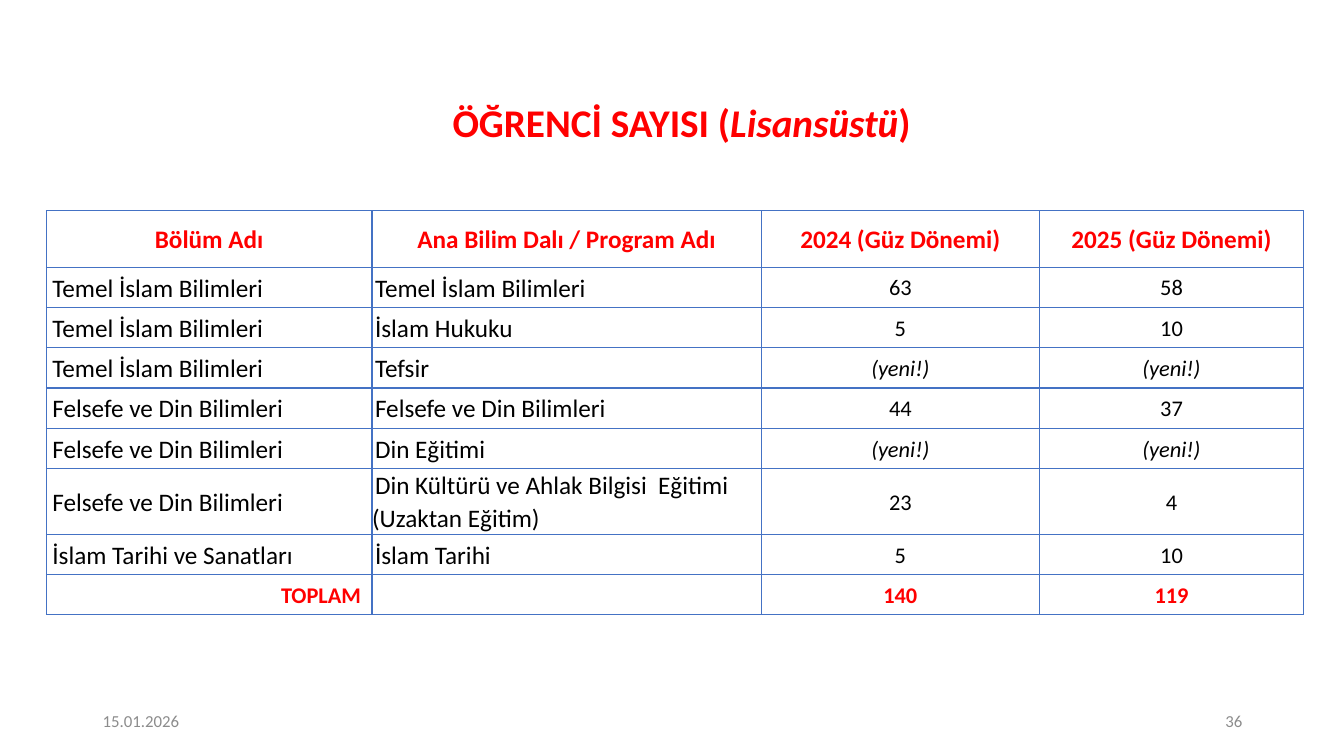
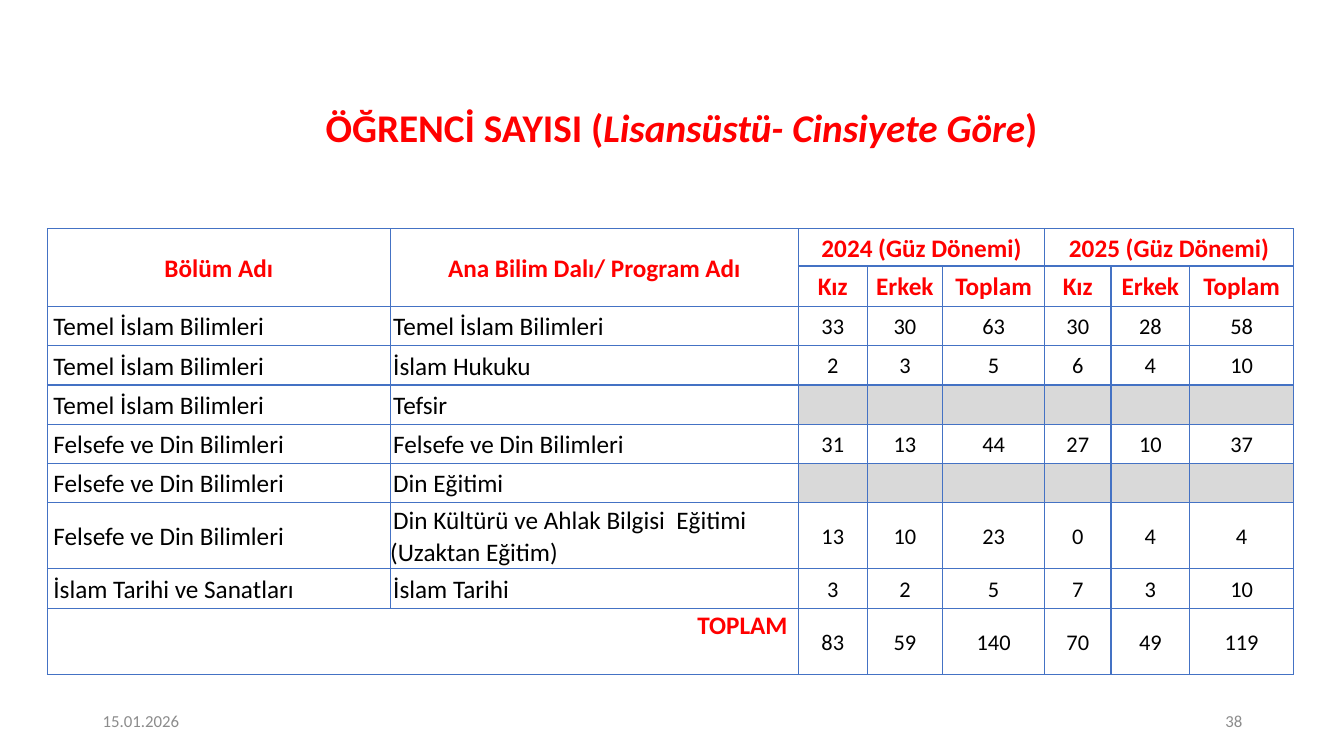
from dataclasses import dataclass, replace
from typing import Optional

from lxml.etree import SubElement
from pptx import Presentation
from pptx.dml.color import RGBColor
from pptx.enum.text import MSO_ANCHOR as Anchor, PP_ALIGN as Align
from pptx.oxml.ns import qn
from pptx.util import Inches, Pt

RED = RGBColor(0xFF, 0x00, 0x00)
BLACK = RGBColor(0x00, 0x00, 0x00)
FOOTER_GREY = RGBColor(0x8C, 0x8C, 0x8C)
EMPTY_GREY = RGBColor(0xD9, 0xD9, 0xD9)
BORDER_BLUE = RGBColor(0x44, 0x72, 0xC4)
FONT = "Calibri"
DATE = "15.01.2026"
NEW = "(yeni!)"


@dataclass(frozen=True)
class Style:
    size: int
    color: RGBColor = BLACK
    bold: bool = False
    italic: bool = False
    align: Align = Align.CENTER
    anchor: Anchor = Anchor.MIDDLE
    spacing: float = 1.07
    indent: float = 0
    right_margin: float = 0


@dataclass(frozen=True)
class Cell:
    text: str
    style: Style
    fill: Optional[RGBColor] = None


@dataclass(frozen=True)
class Program:
    department: str
    name: str
    # (girls, boys) per autumn term; None for a new program
    y2024: Optional[tuple[int, int]] = None
    y2025: Optional[tuple[int, int]] = None


@dataclass(frozen=True)
class TableLayout:
    left: float
    top: float
    columns: list[float]
    rows: list[float]
    merges: list[tuple[int, int, int, int]]


TITLE = Style(28, RED, bold=True, spacing=0.9)
FOOTER = Style(12, FOOTER_GREY, align=Align.LEFT, spacing=1)
HEADER = Style(18, RED, bold=True)
DEPARTMENT = Style(18, align=Align.LEFT, indent=0.06)
PROGRAM = replace(DEPARTMENT, indent=0.03)
VALUE = Style(16)
NEW_VALUE = replace(VALUE, italic=True)
TOTAL = Style(16, RED, bold=True)
TOTAL_LABEL = replace(TOTAL, align=Align.RIGHT, right_margin=0.11)

BASIC = "Temel İslam Bilimleri"
PHILOSOPHY = "Felsefe ve Din Bilimleri"
PROGRAMS = [
    Program(BASIC, BASIC, (33, 30), (30, 28)),
    Program(BASIC, "İslam Hukuku", (2, 3), (6, 4)),
    Program(BASIC, "Tefsir"),
    Program(PHILOSOPHY, PHILOSOPHY, (31, 13), (27, 10)),
    Program(PHILOSOPHY, "Din Eğitimi"),
    Program(PHILOSOPHY, "Din Kültürü ve Ahlak Bilgisi  Eğitimi (Uzaktan Eğitim)",
            (13, 10), (0, 4)),
    Program("İslam Tarihi ve Sanatları", "İslam Tarihi", (3, 2), (7, 3)),
]
TERMS = ["2024 (Güz Dönemi)", "2025 (Güz Dönemi)"]
TOTALS = [(83, 59, 140), (70, 49, 119)]


# Text
def format_paragraph(paragraph, style: Style) -> None:
    if style.indent:
        properties = paragraph._p.get_or_add_pPr()
        properties.set("marL", "0")
        properties.set("indent", str(Inches(style.indent)))
    paragraph.alignment = style.align
    paragraph.line_spacing = style.spacing
    for font in [paragraph.font, *(run.font for run in paragraph.runs)]:
        font.name, font.size = FONT, Pt(style.size)
        font.bold, font.italic = style.bold, style.italic
        font.color.rgb = style.color


def add_text(slide, text: str, style: Style, left: float, top: float,
             width: float, height: float):
    shape = slide.shapes.add_textbox(Inches(left), Inches(top),
                                     Inches(width), Inches(height))
    frame = shape.text_frame
    frame.word_wrap = True
    frame.vertical_anchor = style.anchor
    frame.text = text
    format_paragraph(frame.paragraphs[0], style)
    return frame.paragraphs[0]


def add_frame(slide, topic: str, title_height: float, number: int) -> None:
    """Title with an italic topic, date and slide number."""
    title = add_text(slide, "ÖĞRENCİ SAYISI (", TITLE, 0.73, 0.96, 12.06, title_height)
    for part in (topic, ")"):
        title.add_run().text = part
    format_paragraph(title, TITLE)
    title.runs[1].font.italic = True
    add_text(slide, DATE, FOOTER, 0.92, 6.95, 3, 0.4)
    add_text(slide, str(number), replace(FOOTER, align=Align.RIGHT), 9.42, 6.95, 3, 0.4)


# Table
def add_borders(cell) -> None:
    properties = cell._tc.get_or_add_tcPr()
    for side in ("a:lnL", "a:lnR", "a:lnT", "a:lnB"):
        line = SubElement(properties, qn(side), w=str(Pt(1)))
        fill = SubElement(line, qn("a:solidFill"))
        SubElement(fill, qn("a:srgbClr"), val=str(BORDER_BLUE))


def fill_cell(cell, content: Cell) -> None:
    style = content.style
    cell.margin_left = cell.margin_top = cell.margin_bottom = 0
    cell.margin_right = Inches(style.right_margin)
    cell.vertical_anchor = style.anchor
    add_borders(cell)
    if content.fill is None:
        cell.fill.background()
    else:
        cell.fill.solid()
        cell.fill.fore_color.rgb = content.fill
    cell.text_frame.text = content.text
    format_paragraph(cell.text_frame.paragraphs[0], style)


def add_student_table(slide, layout: TableLayout, cells: list[list[Cell]]) -> None:
    table = slide.shapes.add_table(
        len(layout.rows), len(layout.columns), Inches(layout.left), Inches(layout.top),
        Inches(sum(layout.columns)), Inches(sum(layout.rows))).table
    table.first_row = table.horz_banding = False
    for column, width in zip(table.columns, layout.columns):
        column.width = Inches(width)
    for row, height in zip(table.rows, layout.rows):
        row.height = Inches(height)
    for row_index, row_cells in enumerate(cells):
        for column_index, content in enumerate(row_cells):
            fill_cell(table.cell(row_index, column_index), content)
    for top, left, bottom, right in layout.merges:
        table.cell(top, left).merge(table.cell(bottom, right))


def style_row(texts: list[str], style: Style) -> list[Cell]:
    return [Cell(text, style) for text in texts]


def name_cells(program: Program) -> list[Cell]:
    return [Cell(program.department, DEPARTMENT), Cell(program.name, PROGRAM)]


# Slides
def term_cell(counts: Optional[tuple[int, int]]) -> Cell:
    return Cell(NEW, NEW_VALUE) if counts is None else Cell(str(sum(counts)), VALUE)


def gender_cells(counts: Optional[tuple[int, int]]) -> list[Cell]:
    if counts is None:
        return [Cell("", VALUE, EMPTY_GREY)] * 3
    return style_row([str(count) for count in (*counts, sum(counts))], VALUE)


def add_total_slide(slide) -> None:
    add_frame(slide, "Lisansüstü", 0.56, 36)
    cells = [style_row(["Bölüm Adı", "Ana Bilim Dalı / Program Adı", *TERMS], HEADER)]
    cells += [name_cells(program) + [term_cell(program.y2024), term_cell(program.y2025)]
              for program in PROGRAMS]
    cells.append([Cell("TOPLAM", TOTAL_LABEL), Cell("", VALUE)]
                 + style_row([str(total[-1]) for total in TOTALS], TOTAL))
    layout = TableLayout(0.46, 2.09, [3.23, 3.86, 2.76, 2.62],
                         [0.56] + [0.4] * 5 + [0.65] + [0.4] * 2, [])
    add_student_table(slide, layout, cells)


def add_gender_slide(slide) -> None:
    add_frame(slide, "Lisansüstü- Cinsiyete Göre", 0.66, 38)
    cells = [
        style_row(["Bölüm Adı", "Ana Bilim Dalı/ Program Adı",
                   TERMS[0], "", "", TERMS[1], "", ""], HEADER),
        style_row(["", ""] + ["Kız", "Erkek", "Toplam"] * 2, HEADER),
    ]
    cells += [name_cells(program) + gender_cells(program.y2024) + gender_cells(program.y2025)
              for program in PROGRAMS]
    label = replace(TOTAL_LABEL, size=18, anchor=Anchor.TOP)
    cells.append([Cell("TOPLAM", label), Cell("", label)]
                 + style_row([str(count) for total in TOTALS for count in total], VALUE))
    layout = TableLayout(0.47, 2.27, [3.4, 4.05, 0.68, 0.75, 1.01, 0.66, 0.78, 1.03],
                         [0.37, 0.4] + [0.39] * 5 + [0.65, 0.4, 0.65],
                         [(0, 0, 1, 0), (0, 1, 1, 1), (0, 2, 0, 4), (0, 5, 0, 7),
                          (9, 0, 9, 1)])
    add_student_table(slide, layout, cells)


def main() -> None:
    presentation = Presentation()
    presentation.slide_width, presentation.slide_height = Inches(13.33), Inches(7.5)
    for build in (add_total_slide, add_gender_slide):
        build(presentation.slides.add_slide(presentation.slide_layouts[6]))
    presentation.save("out.pptx")


if __name__ == "__main__":
    main()
